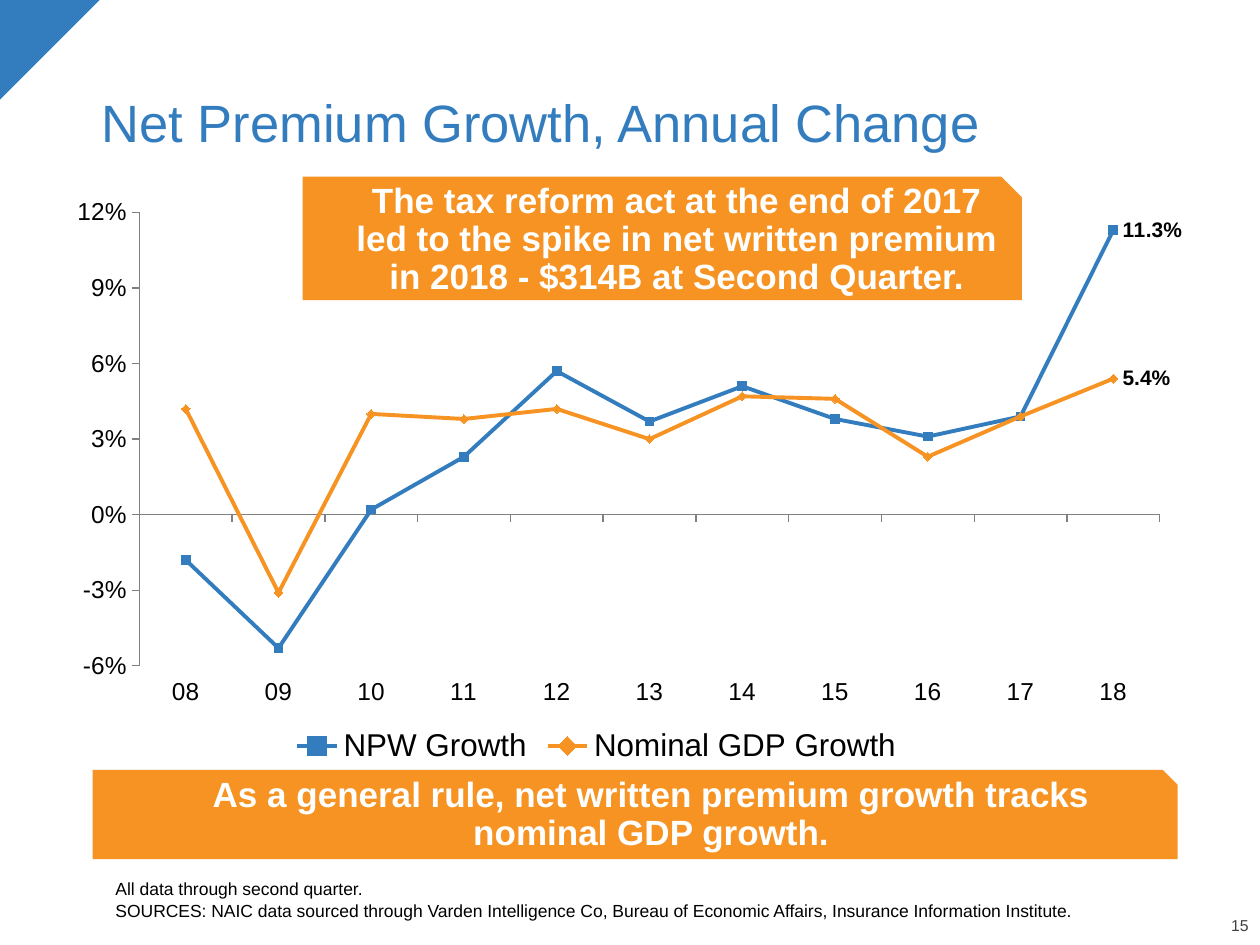
from lxml import etree
from pptx import Presentation
from pptx.chart.data import CategoryChartData
from pptx.dml.color import RGBColor
from pptx.enum.chart import (XL_CHART_TYPE, XL_LABEL_POSITION,
                             XL_LEGEND_POSITION, XL_TICK_LABEL_POSITION,
                             XL_TICK_MARK)
from pptx.enum.shapes import MSO_SHAPE
from pptx.enum.text import MSO_ANCHOR, MSO_AUTO_SIZE, PP_ALIGN
from pptx.oxml import parse_xml
from pptx.oxml.ns import nsdecls, qn
from pptx.util import Pt

LINE = XL_CHART_TYPE.LINE
RIGHT_OF = XL_LABEL_POSITION.RIGHT
BELOW = XL_LEGEND_POSITION.BOTTOM
LOW = XL_TICK_LABEL_POSITION.LOW
OUT, NO_TICK = XL_TICK_MARK.OUTSIDE, XL_TICK_MARK.NONE
TRI, SNIP = MSO_SHAPE.RIGHT_TRIANGLE, MSO_SHAPE.SNIP_1_RECTANGLE
MID, BOTTOM = MSO_ANCHOR.MIDDLE, MSO_ANCHOR.BOTTOM
LEFT, CENTER, RIGHT = PP_ALIGN.LEFT, PP_ALIGN.CENTER, PP_ALIGN.RIGHT
NO_FIT = MSO_AUTO_SIZE.NONE

BLUE, ORANGE, BLACK, WHITE = "337DBE", "F69322", "000000", "FFFFFF"
GREY, DARK = "808080", "404040"

YEARS = ["08", "09", "10", "11", "12", "13", "14", "15", "16", "17", "18"]
GROWTH = [
    ("NPW Growth", BLUE,
     [-0.018, -0.053, 0.002, 0.023, 0.057, 0.037,
      0.051, 0.038, 0.031, 0.039, 0.113]),
    ("Nominal GDP Growth", ORANGE,
     [0.042, -0.031, 0.04, 0.038, 0.042, 0.03,
      0.047, 0.046, 0.023, 0.039, 0.054]),
]
PLOT = {"x": 0.107, "y": 0.063, "w": 0.877, "h": 0.762}
BANNERS = [
    ((173, 101, 411, 70.5),
     "The tax reform act at the end of 2017 led to the spike in net "
     "written premium in 2018 - $314B at Second Quarter."),
    ((53, 440, 620, 51),
     "As a general rule, net written premium growth tracks nominal "
     "GDP growth."),
]
NOTES = [
    "All data through second quarter.",
    "SOURCES: NAIC data sourced through Varden Intelligence Co, "
    "Bureau of Economic Affairs, Insurance Information Institute.",
]


def rgb(code):
    return RGBColor.from_string(code)


def apply(item, values):
    for name, value in values.items():
        setattr(item, name, value)


def style(font, size, color, bold=False):
    apply(font, {"name": "Arial", "size": Pt(size), "bold": bold})
    font.color.rgb = rgb(color)


def place(shape, box):
    names = ("left", "top", "width", "height")
    apply(shape, dict(zip(names, map(Pt, box))))


def write(shape, lines, size, color, align=LEFT, anchor=BOTTOM,
          inset=(0, 0, 0, 0), bold=False, gap=0, indent=0):
    """Fill a shape with formatted paragraphs, without bullets."""
    frame = shape.text_frame
    sides = ("margin_left", "margin_top", "margin_right", "margin_bottom")
    apply(frame, {"word_wrap": True, "auto_size": NO_FIT,
                  "vertical_anchor": anchor,
                  **dict(zip(sides, map(Pt, inset)))})
    frame.text = "\n".join(lines)
    for pos, para in enumerate(frame.paragraphs):
        props = para._p.get_or_add_pPr()
        props.set("marL", str(Pt(indent)))
        props.set("indent", "0")
        etree.SubElement(props, qn("a:buNone"))
        apply(para, {"alignment": align, "line_spacing": 0.9,
                     "space_before": Pt(gap if pos else 0)})
        for run in para.runs:
            style(run.font, size, color, bold)


def add_solid(slide, kind, box, color):
    shape = slide.shapes.add_shape(kind, *map(Pt, box))
    shape.shadow.inherit = False
    shape.fill.solid()
    shape.fill.fore_color.rgb = rgb(color)
    shape.line.fill.background()
    return shape


def add_banner(slide, box, text):
    shape = add_solid(slide, SNIP, box, ORANGE)
    write(shape, [text], 20, WHITE, CENTER, MID,
          (7.2, 3.6, 7.2, 7.2), bold=True, indent=22.5)


def set_plot(chart):
    """Fix the inner plot area as fractions of the chart."""
    parts = "".join(f'<c:{side}Mode val="edge"/>' for side in "xy")
    parts += "".join(f'<c:{k} val="{v}"/>' for k, v in PLOT.items())
    layout = parse_xml(
        f'<c:layout {nsdecls("c")}><c:manualLayout>'
        f'<c:layoutTarget val="inner"/>{parts}'
        '</c:manualLayout></c:layout>')
    area = chart._chartSpace.chart.plotArea
    for old in area.findall(qn("c:layout")):
        area.remove(old)
    area.insert(0, layout)


def set_axis(axis, code):
    apply(axis, {"has_major_gridlines": False, "major_tick_mark": OUT,
                 "minor_tick_mark": NO_TICK})
    apply(axis.tick_labels, {"number_format": code,
                             "number_format_is_linked": False})
    style(axis.tick_labels.font, 14, BLACK)
    axis.format.line.color.rgb = rgb(GREY)
    axis.format.line.width = Pt(0.75)


def set_line(line, color):
    line.smooth = False
    line.marker.style = None
    line.format.line.color.rgb = rgb(color)
    line.format.line.width = Pt(2.25)
    label = line.points[len(YEARS) - 1].data_label
    style(label.font, 12, BLACK, bold=True)
    label.position = RIGHT_OF
    line.data_labels.show_value = False


def add_graph(slide, box):
    data = CategoryChartData(number_format="0.0%")
    data.categories = YEARS
    for name, _, values in GROWTH:
        data.add_series(name, values)
    chart = slide.shapes.add_chart(LINE, *map(Pt, box), data).chart
    apply(chart, {"has_title": False, "has_legend": True})
    style(chart.font, 18, BLACK)
    apply(chart.legend, {"position": BELOW, "include_in_layout": False})
    style(chart.legend.font, 18, BLACK)
    chart.plots[0].vary_by_categories = False
    set_plot(chart)
    set_axis(chart.category_axis, "0")
    chart.category_axis.tick_label_position = LOW
    set_axis(chart.value_axis, "0%")
    apply(chart.value_axis, {"minimum_scale": -0.06, "maximum_scale": 0.12,
                             "major_unit": 0.03})
    for line, (_, color, _) in zip(chart.plots[0].series, GROWTH):
        set_line(line, color)


def main():
    deck = Presentation()
    apply(deck, {"slide_width": Pt(720), "slide_height": Pt(540)})
    slide = deck.slides.add_slide(deck.slide_layouts[1])
    title, body = slide.placeholders

    corner = add_solid(slide, TRI, (-0.5, 0, 57.5, 57.5), BLUE)
    corner.rotation = 90
    page = slide.shapes.add_textbox(*map(Pt, (679, 525, 34.5, 9.5)))
    write(page, ["15"], 9, DARK, RIGHT)
    add_graph(slide, (8.5, 100, 667, 340))

    place(title, (51, 18, 549, 75))
    write(title, ["Net Premium Growth, Annual Change"], 30, BLUE,
          inset=(7.2, 3.6, 7.2, 5))
    place(body, (66, 494, 666, 32.5))
    write(body, NOTES, 10, BLACK, gap=2)
    for box, text in BANNERS:
        add_banner(slide, box, text)
    deck.save("out.pptx")


if __name__ == "__main__":
    main()
